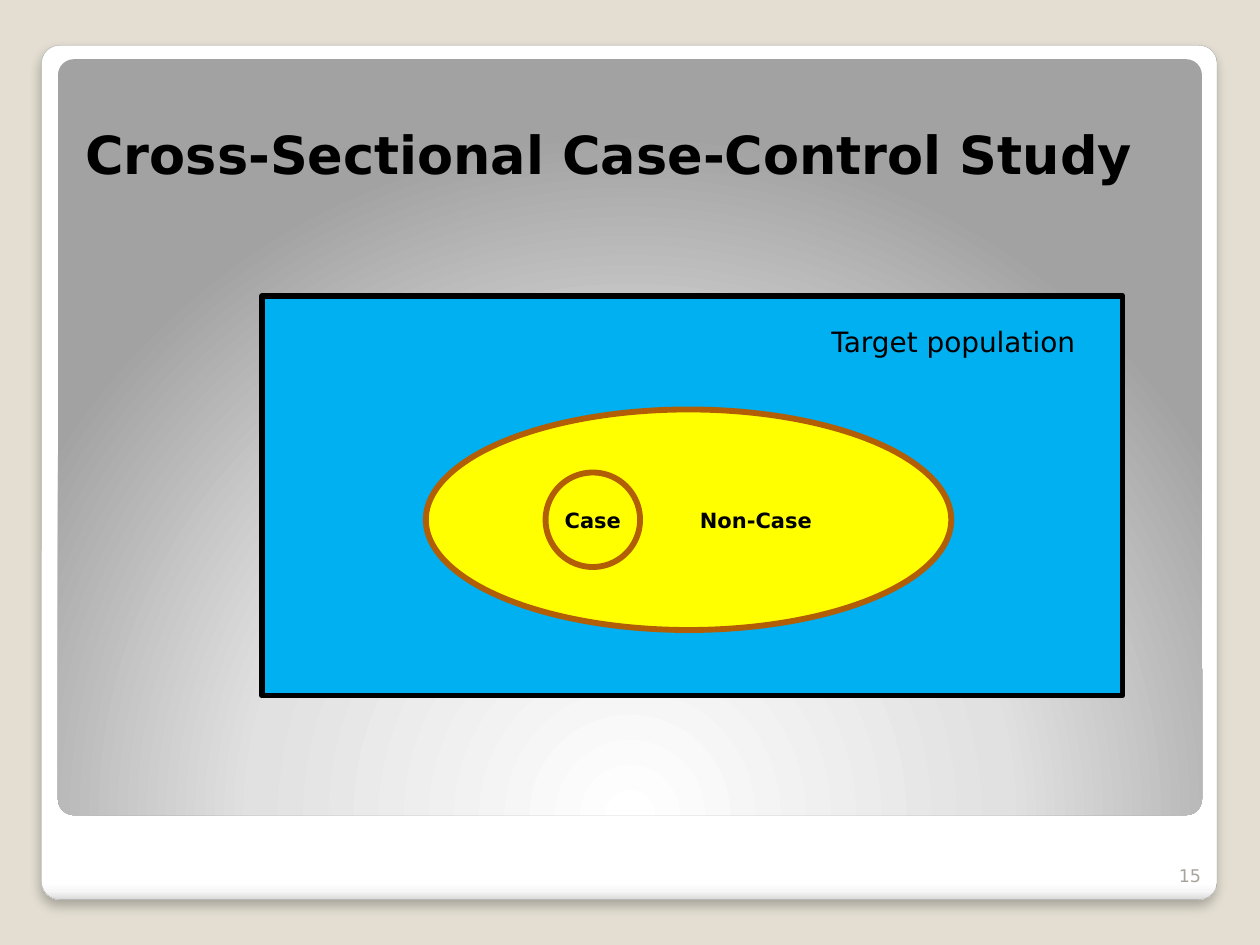
from lxml.etree import SubElement
from pptx import Presentation
from pptx.dml.color import RGBColor
from pptx.enum.shapes import MSO_SHAPE
from pptx.enum.text import MSO_ANCHOR, PP_ALIGN
from pptx.oxml import parse_xml
from pptx.oxml.ns import nsdecls, qn
from pptx.util import Inches, Pt

COLORS = {
    "background": "E3DED1", "frame_line": "A4A4A4", "black": "000000",
    "blue": "00B0F0", "yellow": "FFFF00", "brown": "B25E07", "number": "A8A49B",
}
FONT = "DejaVu Sans"


def add_outline_shape(kind, left, top, width, height, fill, line, weight):
    shape = page.shapes.add_shape(
        kind, Inches(left), Inches(top), Inches(width), Inches(height))
    shape.shadow.inherit = False
    if fill:
        shape.fill.solid()
        shape.fill.fore_color.rgb = RGBColor.from_string(COLORS[fill])
    else:
        shape.fill.background()
    if line:
        shape.line.color.rgb = RGBColor.from_string(COLORS[line])
        shape.line.width = Pt(weight)
    else:
        shape.line.fill.background()
    return shape


def set_gradient(shape, stops, direction):
    stop_xml = "".join(
        f'<a:gs pos="{position * 1000}"><a:srgbClr val="{color}"/></a:gs>'
        for position, color in stops)
    gradient = parse_xml(
        f'<a:gradFill {nsdecls("a")} rotWithShape="1">'
        f"<a:gsLst>{stop_xml}</a:gsLst>{direction}</a:gradFill>")
    properties = shape._element.spPr
    properties.replace(properties.find(qn("a:noFill")), gradient)


deck = Presentation()
deck.slide_width, deck.slide_height = Inches(10), Inches(7.5)
page = deck.slides.add_slide(deck.slide_layouts[6])
page.background.fill.solid()
page.background.fill.fore_color.rgb = RGBColor.from_string(COLORS["background"])

# White frame with a soft shadow
frame = add_outline_shape(MSO_SHAPE.ROUNDED_RECTANGLE, 0.33, 0.36, 9.33, 6.78,
                          None, "frame_line", 0.16)
set_gradient(frame, [(0, "FFFFFF"), (98, "FFFFFF"), (99, "F7F7F7"), (100, "DADADA")],
             '<a:lin ang="5400000" scaled="0"/>')
effects = frame._element.spPr.find(qn("a:effectLst"))
shadow = SubElement(effects, qn("a:outerShdw"), blurRad=str(Pt(6)), dist=str(Pt(4)),
                    dir="5400000", algn="t", rotWithShape="0")
shadow_color = SubElement(shadow, qn("a:srgbClr"), val=COLORS["black"])
SubElement(shadow_color, qn("a:alpha"), val="25000")

# Grey panel lit from below
panel = add_outline_shape(MSO_SHAPE.ROUNDED_RECTANGLE, 0.46, 0.47, 9.08, 6,
                          None, None, 0)
set_gradient(panel, [(0, "FFFFFF"), (55, "E1E1E1"), (100, "A2A2A2")],
             '<a:path path="circle"><a:fillToRect l="50000" t="175000" '
             'r="50000" b="-75000"/></a:path>')
for rounded in (frame, panel):
    rounded.adjustments[0] = 0.021

# Population, study sample and cases
add_outline_shape(MSO_SHAPE.RECTANGLE, 2.08, 2.35, 6.83, 3.17, "blue", "black", 3.35)
add_outline_shape(MSO_SHAPE.OVAL, 3.38, 3.25, 4.17, 1.75, "yellow", "brown", 3.35)
add_outline_shape(MSO_SHAPE.OVAL, 4.33, 3.75, 0.75, 0.75, None, "brown", 3.35)

# Title, labels and page number
labels = [
    ("Cross-Sectional Case-Control Study", 0.58, 0.75, 9, 0.77, 30, True, "black",
     PP_ALIGN.LEFT, MSO_ANCHOR.BOTTOM),
    ("Target population", 6.5, 2.53, 3.08, 0.37, 16, False, "black",
     PP_ALIGN.LEFT, MSO_ANCHOR.TOP),
    ("Case", 4.33, 3.95, 0.75, 0.35, 12, True, "black",
     PP_ALIGN.CENTER, MSO_ANCHOR.MIDDLE),
    ("Non-Case", 5.4, 3.95, 1.2, 0.35, 12, True, "black",
     PP_ALIGN.CENTER, MSO_ANCHOR.MIDDLE),
    ("15", 9.13, 6.68, 0.5, 0.4, 10, False, "number",
     PP_ALIGN.RIGHT, MSO_ANCHOR.BOTTOM),
]
for text, left, top, width, height, size, bold, color, align, anchor in labels:
    box = page.shapes.add_textbox(
        Inches(left), Inches(top), Inches(width), Inches(height))
    box.text_frame.word_wrap = True
    box.text_frame.vertical_anchor = anchor
    para = box.text_frame.paragraphs[0]
    para.alignment = align
    span = para.add_run()
    span.text = text
    span.font.name = FONT
    span.font.size = Pt(size)
    span.font.bold = bold
    span.font.color.rgb = RGBColor.from_string(COLORS[color])

deck.save("out.pptx")
